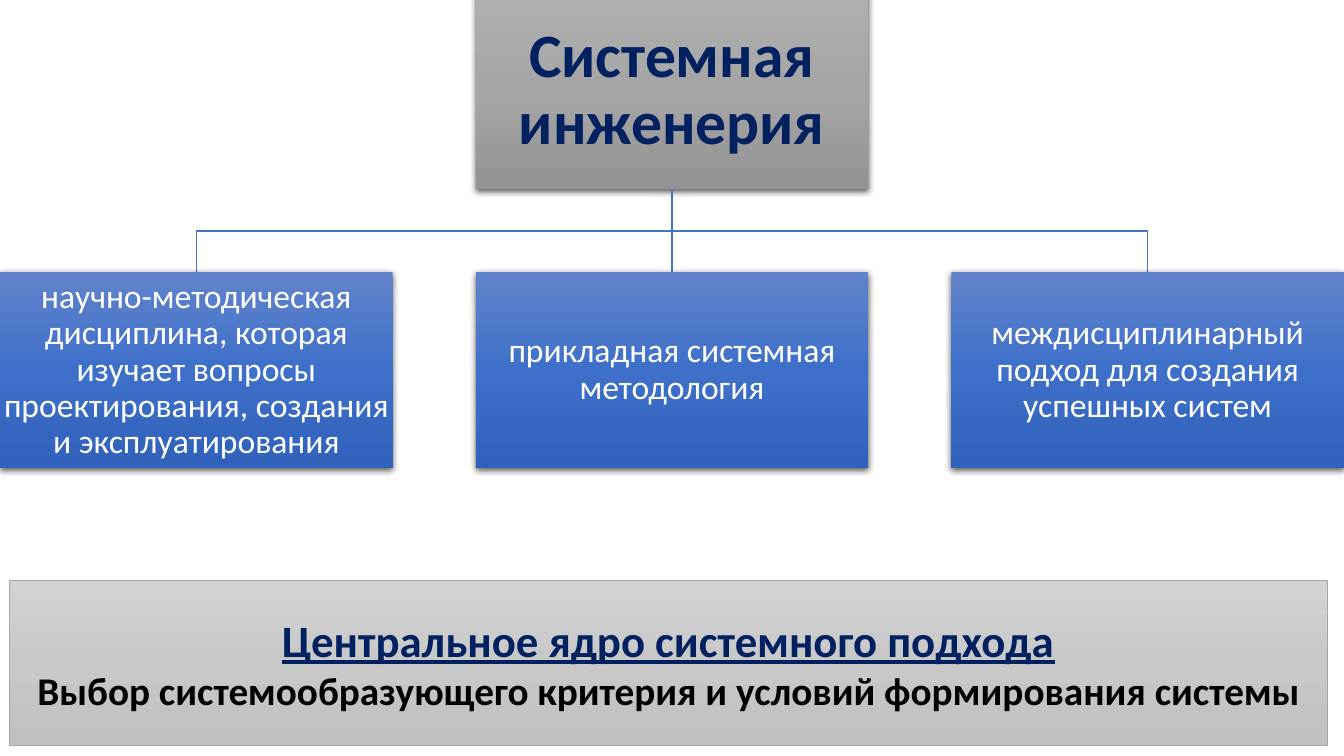
import copy
from dataclasses import dataclass

import pptx
import pptx.dml.color
import pptx.enum.shapes
import pptx.enum.text
import pptx.oxml
import pptx.oxml.ns
import pptx.util

PX = 9525
SLIDE_WIDTH, SLIDE_HEIGHT = 1280, 720


@dataclass(frozen=True)
class Theme:
    font: str = "Calibri"
    navy: str = "002060"
    white: str = "FFFFFF"
    black: str = "000000"
    branch_line: str = "4472C4"
    core_line: str = "A5A5A5"
    root_fill: tuple = ("AFAFAF", "A5A5A5", "939393")
    child_fill: tuple = ("6183CB", "3E70CA", "3062BB")
    core_fill: tuple = ("D2D2D2", "C8C8C8", "C0C0C0")
    root_size: int = 44
    child_size: int = 24
    heading_size: int = 32
    body_size: int = 28


THEME = Theme()


def rgb(code):
    return pptx.dml.color.RGBColor.from_string(code)


def write_text(paragraph, text, *, size, color, bold=False, underline=False, spacing=1.0):
    paragraph.alignment = pptx.enum.text.PP_ALIGN.CENTER
    paragraph.line_spacing = spacing
    run = paragraph.add_run()
    run.text = text
    run.font.name = THEME.font
    run.font.size = pptx.util.Pt(size)
    run.font.color.rgb = rgb(color)
    run.font.bold = bold
    run.font.underline = underline


def fill_gradient(shape, colors):
    """Fill from top to bottom with three evenly spaced colours."""
    shape.fill.gradient()
    shape.fill.gradient_angle = 270
    stop_list = shape._element.spPr.find(".//" + pptx.oxml.ns.qn("a:gsLst"))
    stop_list.insert(1, copy.deepcopy(stop_list[0]))
    for stop, color, position in zip(shape.fill.gradient_stops, colors, (0, 0.5, 1)):
        stop.color.rgb = rgb(color)
        stop.position = position


def drop_shadow(shape):
    effects = shape._element.spPr.find(pptx.oxml.ns.qn("a:effectLst"))
    effects.append(pptx.oxml.parse_xml(
        f'<a:outerShdw {pptx.oxml.ns.nsdecls("a")} blurRad="57150" dist="19050"'
        ' dir="5400000" algn="ctr" rotWithShape="0">'
        f'<a:srgbClr val="{THEME.black}"><a:alpha val="63000"/></a:srgbClr></a:outerShdw>'))


def add_panel(slide, box, colors):
    panel = slide.shapes.add_shape(
        pptx.enum.shapes.MSO_SHAPE.RECTANGLE, *(length * PX for length in box))
    panel.shadow.inherit = False
    fill_gradient(panel, colors)
    panel.line.fill.background()
    panel.text_frame.word_wrap = True
    panel.text_frame.vertical_anchor = pptx.enum.text.MSO_ANCHOR.MIDDLE
    return panel


def add_node(slide, box, text, colors, inset, **text_format):
    node = add_panel(slide, box, colors)
    drop_shadow(node)
    frame = node.text_frame
    frame.margin_left = frame.margin_right = inset * PX
    frame.margin_top = frame.margin_bottom = inset * PX
    write_text(frame.paragraphs[0], text, spacing=0.9, **text_format)
    return node


def style_branch(branch):
    branch.line.color.rgb = rgb(THEME.branch_line)
    branch.line.width = pptx.util.Pt(1)


def add_stem(slide, root, child):
    stem = slide.shapes.add_connector(
        pptx.enum.shapes.MSO_CONNECTOR.STRAIGHT, 0, 0, 0, 0)
    stem.begin_connect(root, 2)
    stem.end_connect(child, 0)
    stem._element.spPr.append(pptx.oxml.parse_xml(
        f'<a:effectLst {pptx.oxml.ns.nsdecls("a")}/>'))
    style_branch(stem)


def add_bent_branch(slide, start, end):
    middle = (start[1] + end[1]) / 2
    outline = slide.shapes.build_freeform(*start, scale=PX)
    outline.add_line_segments(
        [(start[0], middle), (end[0], middle), end], close=False)
    branch = outline.convert_to_shape()
    branch.shadow.inherit = False
    branch.fill.background()
    style_branch(branch)


def add_hierarchy(slide, box, root_text, child_texts):
    """Place the root centred over a row of children, with equal gaps both ways."""
    left, top, width, height = box
    node_width, node_height = 374, 187
    gap = (width - len(child_texts) * node_width) // (len(child_texts) - 1)
    center = left + width // 2
    child_top = top + height - node_height
    start = (center, top + node_height)
    child_lefts = [left + i * (node_width + gap) for i in range(len(child_texts))]

    for child_left in child_lefts:
        end = (child_left + node_width // 2, child_top)
        if end[0] != center:
            add_bent_branch(slide, start, end)

    root = add_node(
        slide, (center - node_width // 2, top, node_width, node_height), root_text,
        THEME.root_fill, 3, size=THEME.root_size, color=THEME.navy, bold=True)
    for child_left, text in zip(child_lefts, child_texts):
        child = add_node(
            slide, (child_left, child_top, node_width, node_height), text,
            THEME.child_fill, 2, size=THEME.child_size, color=THEME.white)
        if child_left + node_width // 2 == center:
            add_stem(slide, root, child)


def add_core(slide, box, heading, body):
    core = add_panel(slide, box, THEME.core_fill)
    core.line.color.rgb = rgb(THEME.core_line)
    core.line.width = pptx.util.Pt(0.5)
    frame = core.text_frame
    write_text(frame.paragraphs[0], heading, size=THEME.heading_size,
               color=THEME.navy, bold=True, underline=True)
    write_text(frame.add_paragraph(), body, size=THEME.body_size,
               color=THEME.black, bold=True)


def main():
    deck = pptx.Presentation()
    deck.slide_width = SLIDE_WIDTH * PX
    deck.slide_height = SLIDE_HEIGHT * PX
    slide = deck.slides.add_slide(deck.slide_layouts[6])
    add_hierarchy(slide, (0, -7, SLIDE_WIDTH, 453), "Системная инженерия", [
        "научно-методическая дисциплина, которая изучает вопросы "
        "проектирования, создания и эксплуатирования",
        "прикладная системная методология",
        "междисциплинарный подход для создания успешных систем",
    ])
    add_core(slide, (9, 553, 1255, 157), "Центральное ядро системного подхода",
             "Выбор системообразующего критерия и условий формирования системы")
    deck.save("out.pptx")


if __name__ == "__main__":
    main()
